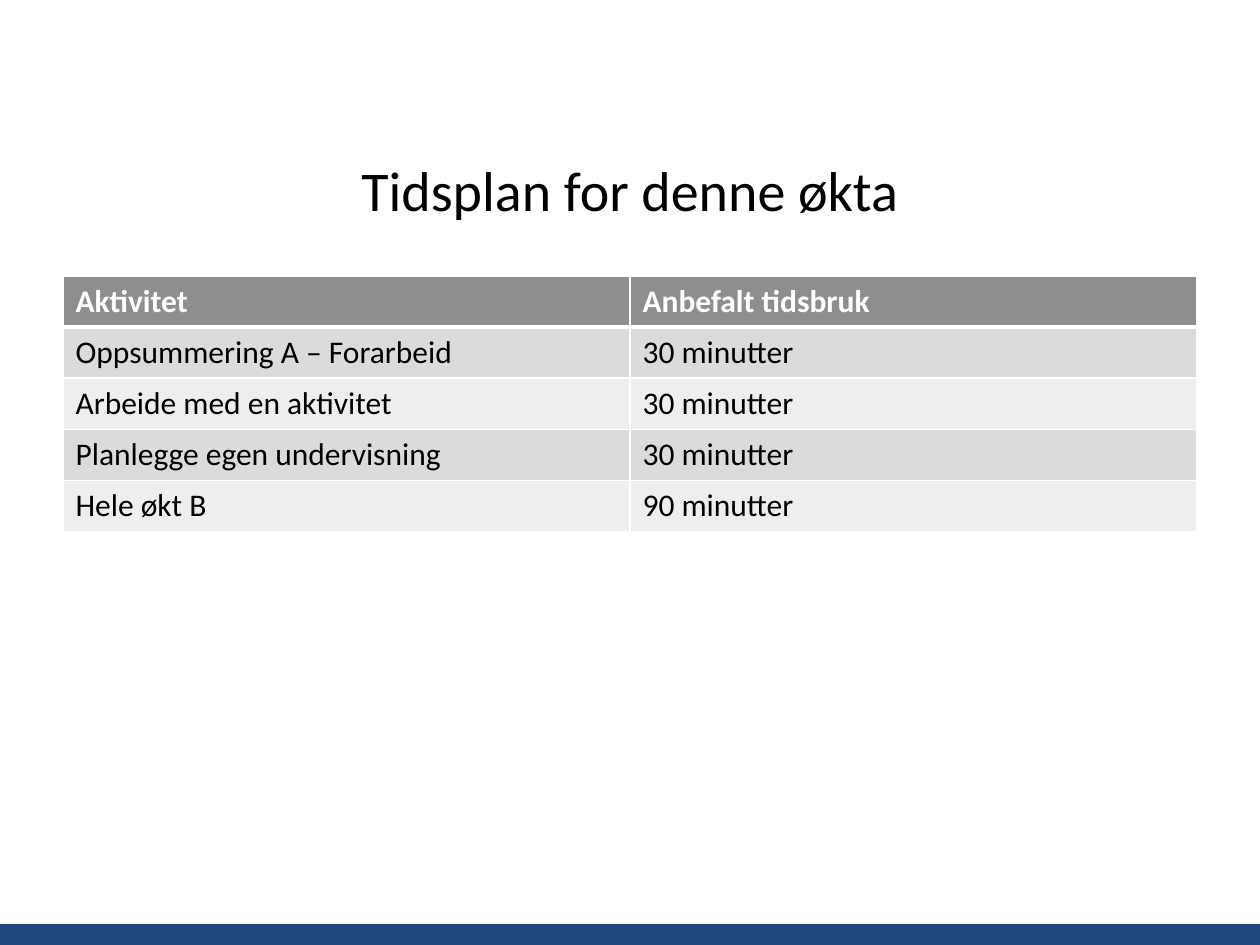
from lxml.etree import SubElement
from pptx import Presentation
from pptx.dml.color import RGBColor
from pptx.enum.shapes import MSO_SHAPE
from pptx.enum.text import MSO_ANCHOR, PP_ALIGN
from pptx.oxml.ns import qn
from pptx.util import Emu, Pt

TITLE = "Tidsplan for denne økta"
ROWS = [
    ("Aktivitet", "Anbefalt tidsbruk"),
    ("Oppsummering A – Forarbeid", "30 minutter"),
    ("Arbeide med en aktivitet", "30 minutter"),
    ("Planlegge egen undervisning", "30 minutter"),
    ("Hele økt B", "90 minutter"),
]
HEADER_FILL = "8D8F8C"
BAND_FILLS = ("DBDBDA", "EEEEEE")
BAR_FILL = "1F487E"
WHITE = "FFFFFF"
BLACK = "000000"

SLIDE_WIDTH, SLIDE_HEIGHT = 1260, 945
MARGIN = 63
CONTENT_WIDTH = SLIDE_WIDTH - 2 * MARGIN
TITLE_TOP, TITLE_HEIGHT = 126, 127
TABLE_TOP, ROW_HEIGHT = 276, 51
BAR_HEIGHT = 21


def px(length):
    return Emu(length * 914400 // 126)


def box(*lengths):
    return [px(length) for length in lengths]


def color(value):
    return RGBColor.from_string(value)


def write(frame, text, size=18, fill=BLACK, bold=False, align=PP_ALIGN.LEFT):
    paragraph = frame.paragraphs[0]
    paragraph.alignment = align
    run = paragraph.add_run()
    run.text = text
    run.font.name = "Calibri"
    run.font.size = Pt(size)
    run.font.bold = bold
    run.font.color.rgb = color(fill)


def add_borders(cell, **widths):
    properties = cell._tc.get_or_add_tcPr()
    for side in "LRTB":
        line = SubElement(properties, qn(f"a:ln{side}"), w=str(Pt(widths.get(side, 1))))
        fill = SubElement(line, qn("a:solidFill"))
        SubElement(fill, qn("a:srgbClr"), val=WHITE)


presentation = Presentation()
presentation.slide_width, presentation.slide_height = box(SLIDE_WIDTH, SLIDE_HEIGHT)
slide = presentation.slides.add_slide(presentation.slide_layouts[5])

title = slide.shapes.title
title.left, title.top, title.width, title.height = box(MARGIN, TITLE_TOP, CONTENT_WIDTH, TITLE_HEIGHT)
title.text_frame.vertical_anchor = MSO_ANCHOR.MIDDLE
write(title.text_frame, TITLE, size=32, align=PP_ALIGN.CENTER)

bar = slide.shapes.add_shape(
    MSO_SHAPE.RECTANGLE, *box(0, SLIDE_HEIGHT - BAR_HEIGHT, SLIDE_WIDTH, BAR_HEIGHT))
bar.shadow.inherit = False
bar.fill.solid()
bar.fill.fore_color.rgb = color(BAR_FILL)
bar.line.fill.background()

table = slide.shapes.add_table(
    len(ROWS), len(ROWS[0]),
    *box(MARGIN, TABLE_TOP, CONTENT_WIDTH, ROW_HEIGHT * len(ROWS))).table
for row_index, row in enumerate(ROWS):
    header = row_index == 0
    for column_index, text in enumerate(row):
        cell = table.cell(row_index, column_index)
        add_borders(cell, B=3 if header else 1, T=3 if row_index == 1 else 1)
        cell.fill.solid()
        cell.fill.fore_color.rgb = color(HEADER_FILL if header else BAND_FILLS[(row_index - 1) % 2])
        write(cell.text_frame, text, fill=WHITE if header else BLACK, bold=header)

presentation.save("out.pptx")
